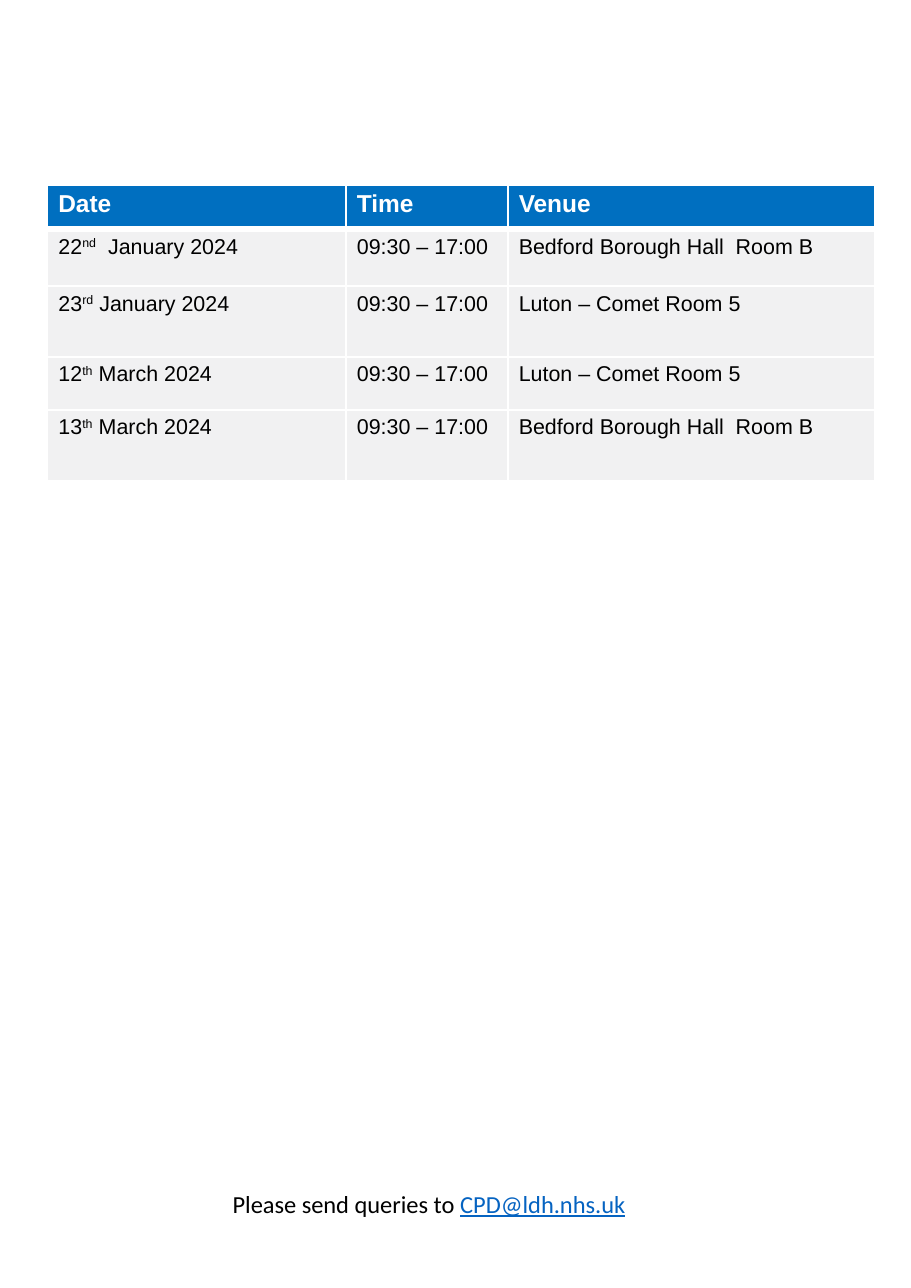
from lxml.etree import SubElement, Element
from pptx import Presentation
from pptx.dml.color import RGBColor
from pptx.enum.text import PP_ALIGN
from pptx.oxml.ns import qn
from pptx.util import Pt

PX = 9144  # 100 px to the inch
HEADINGS = ["Date", "Time", "Venue"]
BEDFORD, LUTON = "Bedford Borough Hall  Room B", "Luton – Comet Room 5"
SESSIONS = [
    (("22", "nd", "  January 2024"), BEDFORD),
    (("23", "rd", " January 2024"), LUTON),
    (("12", "th", " March 2024"), LUTON),
    (("13", "th", " March 2024"), BEDFORD),
]
HOURS = "09:30 – 17:00"
COLUMN_WIDTHS = [271, 147, 333]
ROW_HEIGHTS = [40, 52, 64, 48, 65]


def px(length):
    return length * PX


def colour(value):
    return RGBColor.from_string(value)


def set_font(font, name, size, value, bold=False):
    font.name, font.size, font.bold = name, Pt(size), bold
    font.color.rgb = colour(value)


def add_borders(cell, widths):
    """Draw white cell borders; widths maps a side (L, R, T, B) to points."""
    properties = cell._tc.get_or_add_tcPr()
    for index, (side, width) in enumerate(widths.items()):
        line = Element(qn(f"a:ln{side}"), w=str(Pt(width)))
        fill = SubElement(line, qn("a:solidFill"))
        SubElement(fill, qn("a:srgbClr"), val="FFFFFF")
        properties.insert(index, line)


def fill_cell(cell, parts, row):
    """Write the parts, the second one raised, and style the cell for its row."""
    header = row == 0
    cell.margin_left, cell.margin_top = px(10), px(5)
    cell.margin_right = cell.margin_bottom = 0
    cell.fill.solid()
    cell.fill.fore_color.rgb = colour("006FC0" if header else "F1F1F2")
    add_borders(cell, {"L": 1.5, "R": 1.5,
                       "T": 4.5 if row == 1 else 1.5,
                       "B": 4.5 if header else 1.5})
    para = cell.text_frame.paragraphs[0]
    set_font(para.font, "Arial", 16 if header else 14,
             "FFFFFF" if header else "000000", bold=header)
    for index, text in enumerate(parts):
        span = para.add_run()
        span.text = text
        set_font(span.font, "Arial", 16 if header else 14,
                 "FFFFFF" if header else "000000", bold=header)
        if index == 1:
            span._r.get_or_add_rPr().set("baseline", "30000")


def add_timetable(page, left, top):
    rows = [[(heading,) for heading in HEADINGS]]
    rows += [[date, (HOURS,), (venue,)] for date, venue in SESSIONS]
    table = page.shapes.add_table(
        len(rows), len(HEADINGS), px(left), px(top),
        px(sum(COLUMN_WIDTHS)), px(sum(ROW_HEIGHTS))).table
    for column, width in zip(table.columns, COLUMN_WIDTHS):
        column.width = px(width)
    for row, height in zip(table.rows, ROW_HEIGHTS):
        row.height = px(height)
    for row, values in enumerate(rows):
        for column, parts in enumerate(values):
            fill_cell(table.cell(row, column), parts, row)


def add_contact_line(page, left, top, width, height):
    box = page.shapes.add_textbox(px(left), px(top), px(width), px(height))
    box.text_frame.word_wrap = True
    para = box.text_frame.paragraphs[0]
    para.alignment = PP_ALIGN.CENTER
    set_font(para.font, "Calibri", 16, "000000")
    para.add_run().text = "Please send queries to "
    address = para.add_run()
    address.text = "CPD@ldh.nhs.uk"
    address.font.underline = True
    address.font.color.rgb = colour("0563C1")


def main():
    deck = Presentation()
    deck.slide_width, deck.slide_height = px(827), px(1169)
    page = deck.slides.add_slide(deck.slide_layouts[6])
    add_timetable(page, 43, 168)
    add_contact_line(page, 38, 1074, 703, 37)
    deck.save("out.pptx")


if __name__ == "__main__":
    main()
